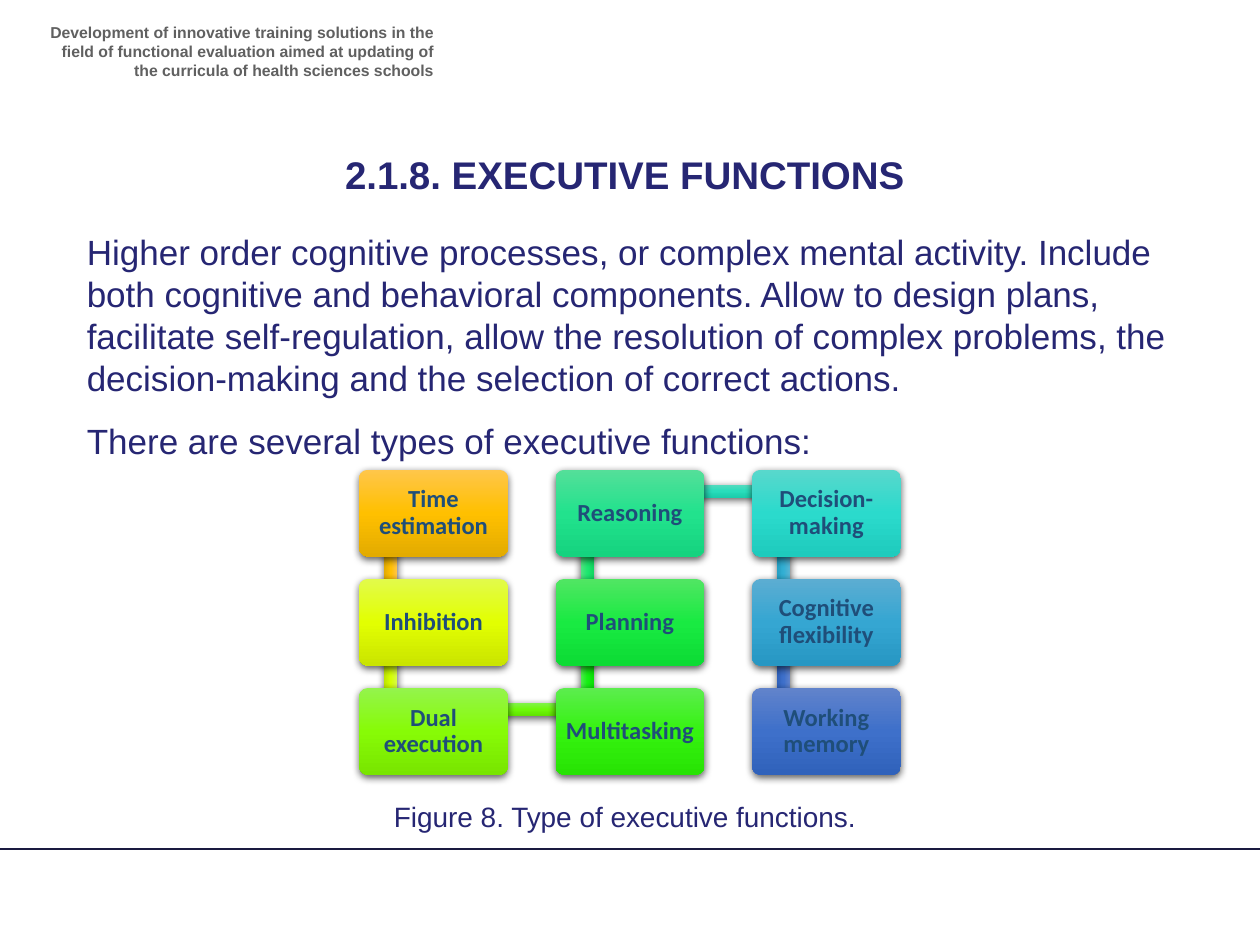
from pptx import Presentation
from pptx.dml.color import RGBColor
from pptx.enum import shapes, text
from pptx.oxml import parse_xml
from pptx.oxml.ns import nsdecls
from pptx.util import Cm, Pt

HEADER = ("Development of innovative training solutions in the ﬁeld of functional "
          "evaluation aimed at updating of the curricula of health sciences schools")
TITLE = "2.1.8. EXECUTIVE FUNCTIONS"
BODY = [
    "Higher order cognitive processes, or complex mental activity. Include both cognitive "
    "and behavioral components. Allow to design plans, facilitate self-regulation, allow the "
    "resolution of complex problems, the decision-making and the selection of correct actions.",
    "There are several types of executive functions:",
]
CAPTION = "Figure 8. Type of executive functions."

# label, column, row, box gradient, gradient of the link to the next box
FUNCTIONS = [
    ("Time estimation", 0, 0, "FFC64B FFC000 E3AB00", "FFC64B FFC000 E3AB00"),
    ("Inhibition", 0, 1, "E2FB4B E2FF01 CAE400", "D6FA4B D5FF01 BEE400"),
    ("Dual execution", 0, 2, "94F44C 87FB06 78E500", "81F24D 6EF909 61E500"),
    ("Multitasking", 1, 2, "5CED4E 35F310 27E303", "50EA4F 16EF14 09E006"),
    ("Planning", 1, 1, "51E663 19EA42 0CDB34", "52E281 1EE66F 11D660"),
    ("Reasoning", 1, 0, "54DF99 22E28D 15D37F", "56DABE 29DDBB 1BCDAC"),
    ("Decision-making", 2, 0, "58D8CC 2BDACC 1ECBBD", "5BB4D3 33AFD3 25A0C4"),
    ("Cognitive flexibility", 2, 1, "5CADD2 35A6D2 2797C3", "6183CB 3E70CA 3062BB"),
    ("Working memory", 2, 2, "6183CB 3E70CA 3062BB", None),
]

THEME = {
    "header": ("Arial", 9, "606060", True),
    "title": ("Arial", 22, "262673", True),
    "body": ("Arial", 20, "262673", False),
    "caption": ("Arial", 16, "262673", False),
    "box": ("Calibri", 14, "1F4E79", True),
    "rule": "1A1A40",
    "shadow": "000000",
}

GRID_X, GRID_Y = 7.24, 9.47
PITCH_X, PITCH_Y = 3.96, 2.2
BOX_W, BOX_H = 3, 1.75
ANCHOR_X, ANCHOR_Y = 0.64, 0.43
LINK = 0.26

CENTER, RIGHT, LEFT = text.PP_ALIGN.CENTER, text.PP_ALIGN.RIGHT, text.PP_ALIGN.LEFT


def style(p, role, align):
    name, size, color, bold = THEME[role]
    p.alignment = align
    p.font.name, p.font.size, p.font.bold = name, Pt(size), bold
    p.font.color.rgb = RGBColor.from_string(color)


def add_text(s, paragraphs, role, align, x, y, w, h):
    tf = s.shapes.add_textbox(Cm(x), Cm(y), Cm(w), Cm(h)).text_frame
    tf.word_wrap = True
    for i, line in enumerate(paragraphs):
        p = tf.add_paragraph() if i else tf.paragraphs[0]
        p.text = line
        if i:
            p.space_before = Pt(12)
        style(p, role, align)


def add_glossy(s, kind, colors, x, y, w, h):
    sp = s.shapes.add_shape(kind, Cm(x), Cm(y), Cm(w), Cm(h))
    sp.line.fill.background()
    sp.shadow.inherit = False
    stops = "".join(f'<a:gs pos="{i * 50000}"><a:srgbClr val="{c}"/></a:gs>'
                    for i, c in enumerate(colors.split()))
    pr = sp.element.spPr
    pr.insert(2, parse_xml(
        f'<a:gradFill {nsdecls("a")} rotWithShape="1"><a:gsLst>{stops}</a:gsLst>'
        '<a:lin ang="5400000" scaled="0"/></a:gradFill>'))
    pr[-1].append(parse_xml(
        f'<a:outerShdw {nsdecls("a")} blurRad="57150" dist="19050" dir="5400000" '
        f'algn="ctr" rotWithShape="0"><a:srgbClr val="{THEME["shadow"]}">'
        '<a:alpha val="63000"/></a:srgbClr></a:outerShdw>'))
    return sp


def corner(col, row):
    return GRID_X + col * PITCH_X, GRID_Y + row * PITCH_Y


def add_link(s, start, end, colors):
    (x1, y1), (x2, y2) = corner(*start), corner(*end)
    length = abs(x2 - x1) + abs(y2 - y1)
    cx, cy = (x1 + x2) / 2 + ANCHOR_X, (y1 + y2) / 2 + ANCHOR_Y
    sp = add_glossy(s, shapes.MSO_SHAPE.RECTANGLE, colors,
                    cx - length / 2, cy - LINK / 2, length, LINK)
    if start[0] == end[0]:
        sp.rotation = 90 if end[1] > start[1] else 270


def add_box(s, label, col, row, colors):
    sp = add_glossy(s, shapes.MSO_SHAPE.ROUNDED_RECTANGLE, colors,
                    *corner(col, row), BOX_W, BOX_H)
    sp.adjustments[0] = 0.1
    tf = sp.text_frame
    tf.word_wrap = True
    tf.vertical_anchor = text.MSO_ANCHOR.MIDDLE
    tf.margin_left = tf.margin_right = tf.margin_top = tf.margin_bottom = Cm(0.15)
    p = tf.paragraphs[0]
    p.text = label
    p.line_spacing = 0.9
    style(p, "box", CENTER)


def main():
    prs = Presentation()
    prs.slide_width, prs.slide_height = Cm(25.4), Cm(19.05)
    s = prs.slides.add_slide(prs.slide_layouts[6])

    rule = s.shapes.add_connector(shapes.MSO_CONNECTOR.STRAIGHT,
                                  Cm(-0.13), Cm(17.12), Cm(25.4), Cm(17.12))
    rule.line.width = Pt(1)
    rule.line.color.rgb = RGBColor.from_string(THEME["rule"])
    rule.element.spPr.append(parse_xml(f'<a:effectLst {nsdecls("a")}/>'))

    add_text(s, [HEADER], "header", RIGHT, 0.71, 0.33, 8.28, 1.19)

    for i, (label, col, row, colors, link) in enumerate(FUNCTIONS):
        if link:
            add_link(s, (col, row), FUNCTIONS[i + 1][1:3], link)
        add_box(s, label, col, row, colors)

    add_text(s, [TITLE], "title", CENTER, 1.7, 2.92, 21.79, 1.19)
    add_text(s, BODY, "body", LEFT, 1.5, 4.52, 23.19, 4.95)
    add_text(s, [CAPTION], "caption", CENTER, 1.4, 16, 22.4, 0.94)

    prs.save("out.pptx")


if __name__ == "__main__":
    main()
